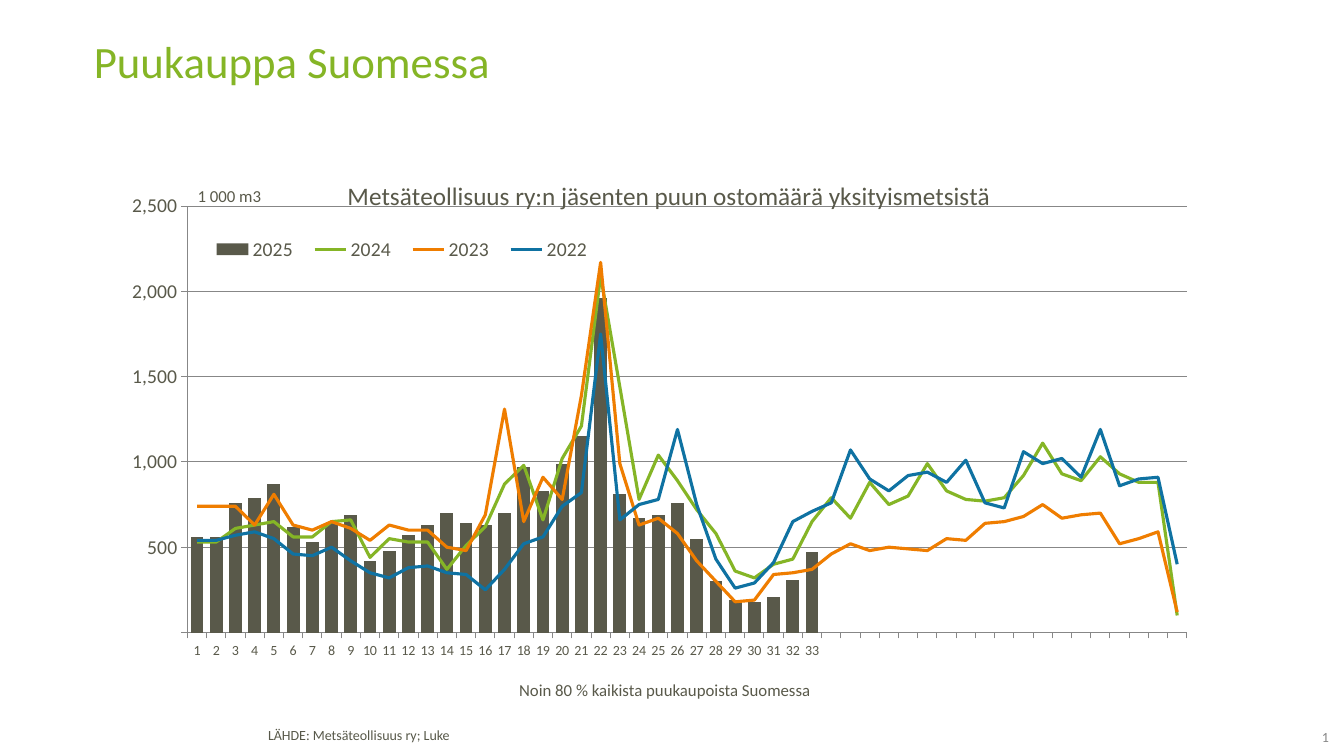
import lxml.etree
import pptx
import pptx.chart.data
import pptx.dml.color
import pptx.enum.chart
import pptx.enum.text
import pptx.oxml
import pptx.oxml.ns
import pptx.util

Inches = pptx.util.Inches
Pt = pptx.util.Pt
qn = pptx.oxml.ns.qn

FONT = "Calibri"
DARK, GREEN, ORANGE, BLUE, GREY = "59594A", "85B526", "EF7D00", "0F72A2", "878787"
WEEKS = 52
PURCHASES = {
    "2025": (DARK, [560, 560, 760, 790, 870, 620, 530, 640, 690, 420, 480, 570, 630,
                    700, 640, 630, 700, 970, 830, 990, 1150, 1960, 810, 670, 690, 760,
                    550, 300, 190, 180, 210, 310, 470]),
    "2024": (GREEN, [530, 530, 610, 630, 650, 560, 560, 650, 660, 440, 550, 530, 530,
                     370, 510, 620, 870, 980, 660, 1020, 1210, 2090, 1440, 780, 1040, 890,
                     720, 580, 360, 320, 400, 430, 650, 790, 670, 880, 750, 800, 990,
                     830, 780, 770, 790, 920, 1110, 930, 890, 1030, 930, 880, 880, 100]),
    "2023": (ORANGE, [740, 740, 740, 630, 810, 630, 600, 650, 610, 540, 630, 600, 600,
                      500, 480, 690, 1310, 650, 910, 780, 1390, 2170, 990, 630, 670, 580,
                      420, 300, 180, 190, 340, 350, 370, 460, 520, 480, 500, 490, 480,
                      550, 540, 640, 650, 680, 750, 670, 690, 700, 520, 550, 590, 120]),
    "2022": (BLUE, [540, 540, 570, 590, 550, 460, 450, 500, 420, 350, 320, 380, 390,
                    350, 340, 250, 370, 520, 560, 740, 820, 1750, 660, 750, 780, 1190,
                    750, 430, 260, 290, 410, 650, 710, 760, 1070, 900, 830, 920, 940,
                    880, 1010, 760, 730, 1060, 990, 1020, 910, 1190, 860, 900, 910, 400]),
}


def color(hex_value):
    return pptx.dml.color.RGBColor.from_string(hex_value)


def style_font(font, size, hex_value=DARK):
    font.name = FONT
    font.size = Pt(size)
    font.bold = False
    font.color.rgb = color(hex_value)


def write_text(text_frame, text, size=12, hex_value=DARK, align=None, spacing=None):
    paragraph = text_frame.paragraphs[0]
    run = paragraph.add_run()
    run.text = text
    style_font(run.font, size, hex_value)
    if align is not None:
        paragraph.alignment = align
    if spacing is not None:
        paragraph.line_spacing = spacing


def add_element(parent, tag, value=None):
    element = lxml.etree.SubElement(parent, qn(tag))
    if value is not None:
        element.set("val", str(value))
    return element


def place(element, x, y, width=None, height=None, inner=False):
    for old_layout in element.findall(qn("c:layout")):
        element.remove(old_layout)
    layout = pptx.oxml.parse_xml(f"<c:layout {pptx.oxml.ns.nsdecls('c')}/>")
    manual = add_element(layout, "c:manualLayout")
    if inner:
        add_element(manual, "c:layoutTarget", "inner")
    add_element(manual, "c:xMode", "edge")
    add_element(manual, "c:yMode", "edge")
    for name, value in (("x", x), ("y", y), ("w", width), ("h", height)):
        if value is not None:
            add_element(manual, f"c:{name}", value)
    overlay = element.find(qn("c:overlay"))
    if overlay is None:
        element.insert(0, layout)
    else:
        overlay.addprevious(layout)


def move_to_lines(bar_plot):
    bars = bar_plot._element
    lines = pptx.oxml.parse_xml(f"<c:lineChart {pptx.oxml.ns.nsdecls('c')}/>")
    add_element(lines, "c:grouping", "standard")
    add_element(lines, "c:varyColors", 0)
    for series in bars.findall(qn("c:ser"))[1:]:
        for bar_setting in series.findall(qn("c:invertIfNegative")):
            series.remove(bar_setting)
        lines.append(series)
    add_element(lines, "c:marker", 1)
    for axis in bars.findall(qn("c:axId")):
        add_element(lines, "c:axId", axis.get("val"))
    bars.addnext(lines)


class SlideBuilder:
    def __init__(self, presentation):
        self.slide = presentation.slides.add_slide(presentation.slide_layouts[5])

    def title(self, text, box):
        shape = self.slide.shapes.title
        shape.left, shape.top, shape.width, shape.height = map(Inches, box)
        shape.text_frame.vertical_anchor = pptx.enum.text.MSO_ANCHOR.TOP
        write_text(shape.text_frame, text, size=32, hex_value=GREEN,
                   align=pptx.enum.text.PP_ALIGN.LEFT, spacing=0.8)

    def text(self, text, box, margins=(0.1, 0.05, 0.1, 0.05),
             anchor=pptx.enum.text.MSO_ANCHOR.TOP, **text_format):
        frame = self.slide.shapes.add_textbox(*map(Inches, box)).text_frame
        frame.word_wrap = True
        frame.vertical_anchor = anchor
        (frame.margin_left, frame.margin_top,
         frame.margin_right, frame.margin_bottom) = map(Inches, margins)
        write_text(frame, text, **text_format)

    def chart(self, title, unit, purchases, box):
        data = pptx.chart.data.CategoryChartData()
        shown_weeks = len(purchases["2025"][1])
        data.categories = [str(week) if week <= shown_weeks else ""
                           for week in range(1, WEEKS + 1)]
        for year, (_, volumes) in purchases.items():
            padding = [None] * (WEEKS - len(volumes))
            data.add_series(year, [volume * 1000 for volume in volumes] + padding)
        chart = self.slide.shapes.add_chart(
            pptx.enum.chart.XL_CHART_TYPE.COLUMN_CLUSTERED, *map(Inches, box), data).chart
        style_font(chart.font, 10)
        chart.has_title = True
        write_text(chart.chart_title.text_frame, title, size=18)
        title_element = chart.chart_title._element
        for overlay in title_element.findall(qn("c:overlay")):
            overlay.set("val", "1")
        place(title_element, 0.22, 0.03)
        place(chart._chartSpace.chart.plotArea, 0.088, 0.092, 0.848, 0.82, inner=True)
        self.format_axes(chart, unit)
        self.format_legend(chart)
        self.format_series(chart, [hex_value for hex_value, _ in purchases.values()])

    def format_axes(self, chart, unit):
        values, weeks = chart.value_axis, chart.category_axis
        values.minimum_scale, values.maximum_scale = 0, 2500000
        values.major_unit = 500000
        values.tick_labels.number_format = "#,###,"
        values.tick_labels.number_format_is_linked = False
        style_font(values.tick_labels.font, 14)
        style_font(weeks.tick_labels.font, 10)
        values.has_major_gridlines = True
        for line in (values.major_gridlines.format.line, values.format.line, weeks.format.line):
            line.color.rgb = color(GREY)
            line.width = Pt(0.75)
        for axis in (values, weeks):
            axis.major_tick_mark = pptx.enum.chart.XL_TICK_MARK.OUTSIDE
        values.has_title = True
        frame = values.axis_title.text_frame
        write_text(frame, unit, size=12)
        frame._txBody.bodyPr.set("rot", "0")
        frame._txBody.bodyPr.set("vert", "horz")
        place(values.axis_title._element, 0.094, 0.045)

    def format_legend(self, chart):
        chart.has_legend = True
        chart.legend.position = pptx.enum.chart.XL_LEGEND_POSITION.RIGHT
        chart.legend.include_in_layout = False
        style_font(chart.legend.font, 14)
        place(chart.legend._element, 0.1, 0.14, 0.34, 0.07)

    def format_series(self, chart, colors):
        bar_plot = chart.plots[0]
        bar_plot.gap_width = 50
        bar_plot.vary_by_categories = False
        move_to_lines(bar_plot)
        bars, lines = chart.plots
        bars.series[0].format.fill.solid()
        bars.series[0].format.fill.fore_color.rgb = color(colors[0])
        for series, hex_value in zip(lines.series, colors[1:]):
            series.smooth = False
            series.marker.style = pptx.enum.chart.XL_MARKER_STYLE.NONE
            series.format.line.color.rgb = color(hex_value)
            series.format.line.width = Pt(2.25)


def main():
    presentation = pptx.Presentation()
    presentation.slide_width = Inches(13.33)
    presentation.slide_height = Inches(7.5)
    builder = SlideBuilder(presentation)
    builder.text("LÄHDE: Metsäteollisuus ry; Luke", (2.56, 7.18, 7.18, 0.27),
                 size=10, hex_value="58594A", spacing=0.85)
    builder.text("1", (12.65, 7.24, 0.53, 0.19), margins=(0, 0, 0, 0.04),
                 anchor=pptx.enum.text.MSO_ANCHOR.MIDDLE, size=10, hex_value=GREY,
                 align=pptx.enum.text.PP_ALIGN.RIGHT)
    builder.title("Puukauppa Suomessa", (0.83, 0.39, 11.69, 0.98))
    builder.chart("Metsäteollisuus ry:n jäsenten puun ostomäärä yksityismetsistä",
                  "1 000 m3", PURCHASES, (0.83, 1.57, 11.69, 5.16))
    builder.text("Noin 80 % kaikista puukaupoista Suomessa", (5.05, 6.69, 3.28, 0.31))
    presentation.save("out.pptx")


if __name__ == "__main__":
    main()
